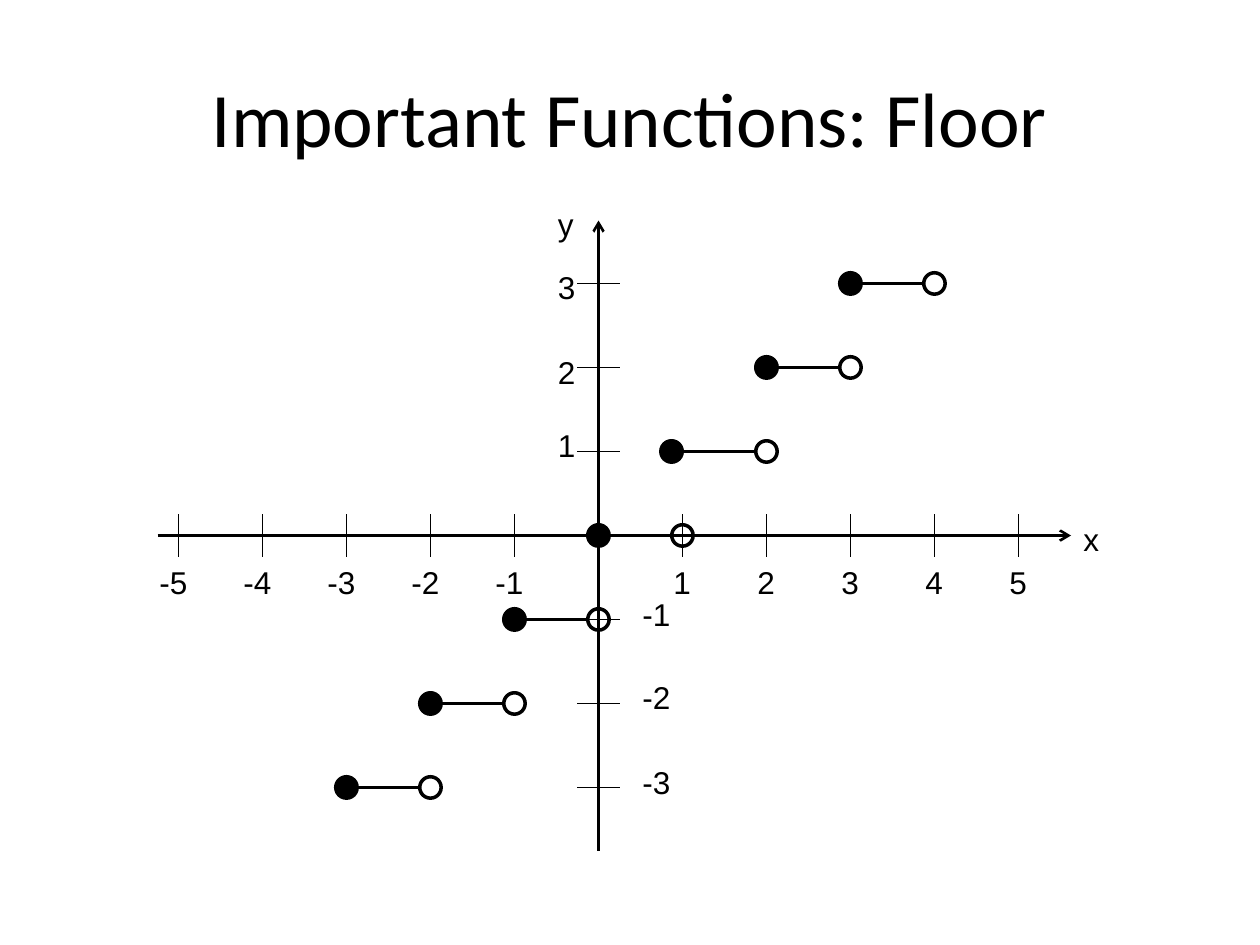
from lxml.etree import SubElement
from pptx import Presentation
from pptx.dml.color import RGBColor
from pptx.enum.shapes import MSO_CONNECTOR, MSO_SHAPE
from pptx.enum.text import MSO_ANCHOR, PP_ALIGN
from pptx.oxml.ns import qn
from pptx.util import Inches, Pt

BLACK = RGBColor(0, 0, 0)
UNIT = 2 / 3
ORIGIN_X, ORIGIN_Y = 4.75, 4.25
TICK = 0.17
DOT = 0.17
RADIUS = DOT / 2

prs = Presentation()
prs.slide_width, prs.slide_height = Inches(10), Inches(7.5)
slide = prs.slides.add_slide(prs.slide_layouts[5])


def write(frame, text, font="Arial", size=18, align=PP_ALIGN.LEFT, anchor=MSO_ANCHOR.TOP):
    frame.word_wrap = True
    frame.vertical_anchor = anchor
    paragraph = frame.paragraphs[0]
    paragraph.alignment = align
    run = paragraph.add_run()
    run.text = text
    run.font.name = font
    run.font.size = Pt(size)
    run.font.color.rgb = BLACK


def draw_line(x1, y1, x2, y2, width, arrow=False):
    line = slide.shapes.add_connector(
        MSO_CONNECTOR.STRAIGHT, Inches(x1), Inches(y1), Inches(x2), Inches(y2))
    line.line.color.rgb = BLACK
    line.line.width = Pt(width)
    if arrow:
        SubElement(line.line._get_or_add_ln(), qn("a:tailEnd"), type="arrow")
    SubElement(line._element.spPr, qn("a:effectLst"))


title = slide.shapes.title
title.left, title.top = Inches(0.5), Inches(0.3)
title.width, title.height = Inches(9), Inches(1.25)
write(title.text_frame, "Important Functions: Floor", font="Calibri", size=44,
      align=PP_ALIGN.CENTER, anchor=MSO_ANCHOR.MIDDLE)

draw_line(1.25, ORIGIN_Y, 8.5, ORIGIN_Y, 1.5, arrow=True)
draw_line(ORIGIN_X, 6.75, ORIGIN_X, 1.75, 1.5, arrow=True)

x_values = [n for n in range(-5, 6) if n]
y_label_tops = {3: 2.08, 2: 2.75, 1: 3.33, -1: 4.67, -2: 5.33, -3: 6.01}
for n in x_values:
    x = ORIGIN_X + n * UNIT
    draw_line(x, ORIGIN_Y - TICK, x, ORIGIN_Y + TICK, 0.75)
for n in y_label_tops:
    y = ORIGIN_Y - n * UNIT
    draw_line(ORIGIN_X + TICK, y, ORIGIN_X - TICK, y, 0.75)

labels = [("x", 8.5, 4.08, 0.67), ("y", 4.33, 1.58, 0.92)]
labels += [(str(n), ORIGIN_X + n * UNIT - (0.17 if n > 0 else 0.25), 4.42, 0.5)
           for n in x_values]
labels += [(str(n), 4.33 if n > 0 else 5, top, 0.5) for n, top in y_label_tops.items()]
for text, left, top, width in labels:
    label = slide.shapes.add_textbox(Inches(left), Inches(top), Inches(width), Inches(0.4))
    write(label.text_frame, text)

for n in range(-3, 4):
    start = ORIGIN_X + n * UNIT
    end = start + UNIT
    y = ORIGIN_Y - n * UNIT
    draw_line(start - RADIUS, y, end - RADIUS, y, 2.25)
    closed_x = 5.33 if n == 1 else start
    for x, closed in ((closed_x, True), (end, False)):
        dot = slide.shapes.add_shape(
            MSO_SHAPE.OVAL, Inches(x - RADIUS), Inches(y - RADIUS), Inches(DOT), Inches(DOT))
        dot.shadow.inherit = False
        dot.line.color.rgb = BLACK
        dot.line.width = Pt(2)
        if closed:
            dot.fill.solid()
            dot.fill.fore_color.rgb = BLACK
        else:
            dot.fill.background()

prs.save("out.pptx")
